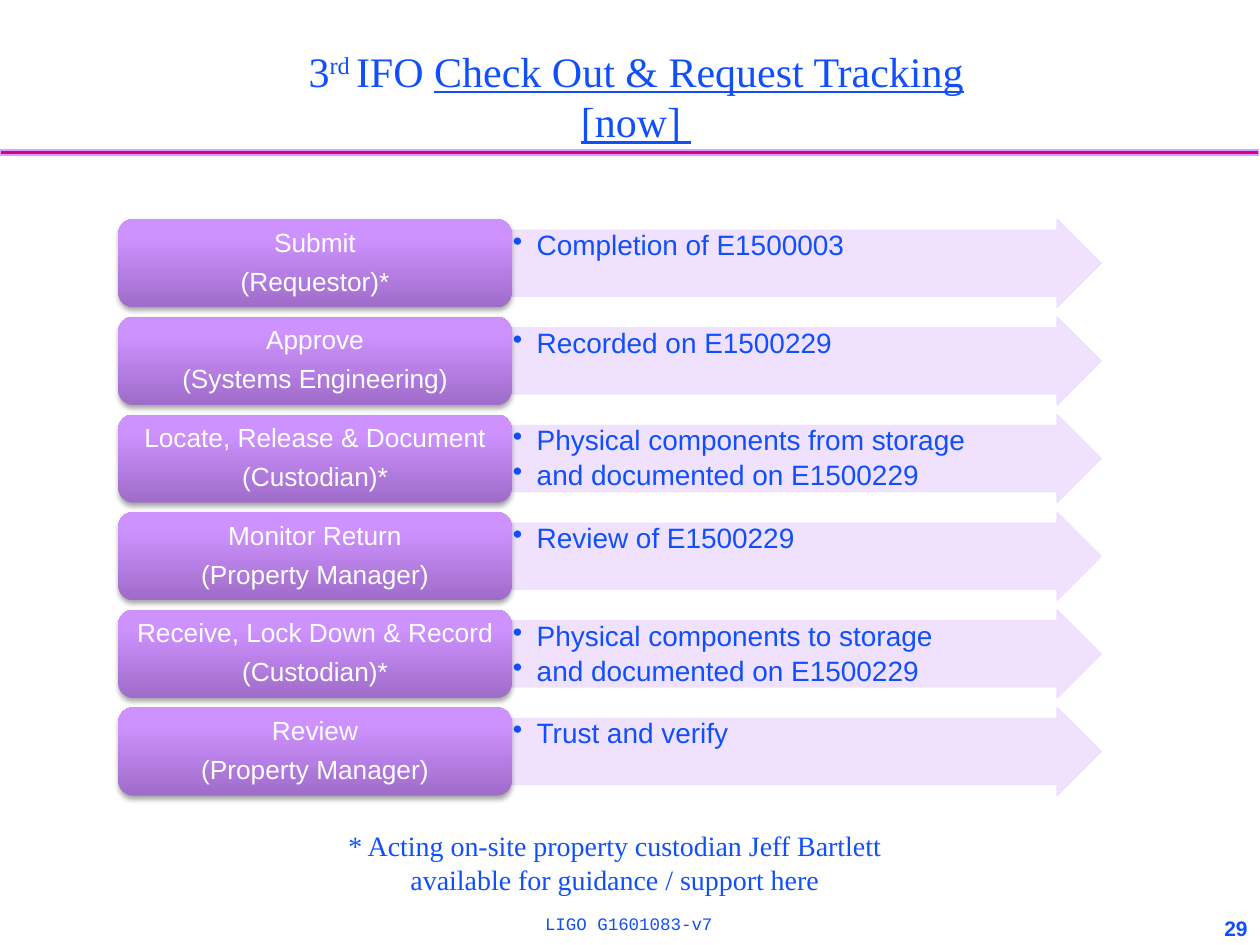
from pptx import Presentation
from pptx.dml.color import RGBColor
from pptx.enum.shapes import MSO_SHAPE
from pptx.enum.text import MSO_ANCHOR, PP_ALIGN
from pptx.oxml import parse_xml
from pptx.oxml.ns import nsdecls
from pptx.util import Inches, Pt
from copy import deepcopy
from lxml import etree

BLUE = RGBColor(0x11, 0x4F, 0xFB)
WHITE = RGBColor(0xFF, 0xFF, 0xFF)
MAGENTA = RGBColor(0xDC, 0x00, 0x81)
VIOLET = RGBColor(0xD4, 0x9F, 0xFF)
PALE = RGBColor(0xEF, 0xDF, 0xFF)
LABEL_STOPS = [(0, RGBColor(0x9F, 0x6C, 0xC9)),
               (0.8, RGBColor(0xCE, 0x92, 0xFF)),
               (1, RGBColor(0xCF, 0x94, 0xFF))]
RECT, ROUNDED = MSO_SHAPE.RECTANGLE, MSO_SHAPE.ROUNDED_RECTANGLE
ARROW = MSO_SHAPE.RIGHT_ARROW
TOP, MIDDLE = MSO_ANCHOR.TOP, MSO_ANCHOR.MIDDLE
LEFT, CENTER, RIGHT = PP_ALIGN.LEFT, PP_ALIGN.CENTER, PP_ALIGN.RIGHT

ALPHA = f'<a:alpha {nsdecls("a")} val="90000"/>'
BULLET = f'<a:buChar {nsdecls("a")} char="•"/>'
SHADOW = (f'<a:effectLst {nsdecls("a")}>'
          '<a:outerShdw blurRad="39400" dist="22900" dir="5400000" rotWithShape="0">'
          '<a:srgbClr val="000000"><a:alpha val="35000"/></a:srgbClr>'
          '</a:outerShdw></a:effectLst>')

STEPS = [
    (["Submit", "(Requestor)*"], ["Completion of E1500003"]),
    (["Approve", "(Systems Engineering)"], ["Recorded on E1500229"]),
    (["Locate, Release & Document", "(Custodian)*"],
     ["Physical components from storage", "and documented on E1500229"]),
    (["Monitor Return", "(Property Manager)"], ["Review of E1500229"]),
    (["Receive, Lock Down & Record", "(Custodian)*"],
     ["Physical components to storage", "and documented on E1500229"]),
    (["Review", "(Property Manager)"], ["Trust and verify"]),
]
FIRST_TOP, ROW_PITCH, ROW_HEIGHT = 1.74, 0.775, 0.7


def write_lines(tf, lines, size, font, color, align, anchor, inset=None):
    """Fill a frame with one paragraph per line; inset is (horizontal, vertical)."""
    tf.word_wrap = True
    tf.vertical_anchor = anchor
    if inset:
        tf.margin_left = tf.margin_right = Inches(inset[0])
        tf.margin_top = tf.margin_bottom = Inches(inset[1])
    tf.text = "\n".join(lines)
    for p in tf.paragraphs:
        p.alignment = align
        for r in p.runs:
            r.font.size = Pt(size)
            r.font.name = font
            r.font.color.rgb = color


def add_text(at, lines, size, font, align=CENTER, anchor=TOP):
    tf = s.shapes.add_textbox(*map(Inches, at)).text_frame
    write_lines(tf, lines, size, font, BLUE, align, anchor)
    return tf


prs = Presentation()
prs.slide_width, prs.slide_height = Inches(10), Inches(7.5)
s = prs.slides.add_slide(prs.slide_layouts[6])

# Rule under the title
bar = s.shapes.add_shape(RECT, Inches(0), Inches(1.19), Inches(9.99), Inches(0.04))
bar.shadow.inherit = False
bar.fill.solid()
bar.fill.fore_color.rgb = MAGENTA
bar.line.color.rgb = VIOLET
bar.line.width = Pt(0.75)

# Process rows: an arrow with details, and a label at its tail
for i, (label_lines, details) in enumerate(STEPS):
    top = Inches(FIRST_TOP + i * ROW_PITCH)

    arrow = s.shapes.add_shape(ARROW, Inches(4.06), top, Inches(4.68), Inches(ROW_HEIGHT))
    arrow.adjustments[0] = 0.75
    arrow.shadow.inherit = False
    arrow.fill.solid()
    arrow.fill.fore_color.rgb = PALE
    arrow.line.color.rgb = PALE
    arrow.line.width = Pt(0.75)
    for color in arrow.fill._xPr.iter("{*}srgbClr"):
        color.append(parse_xml(ALPHA))
    write_lines(arrow.text_frame, details, 16, "Arial", BLUE, LEFT, TOP, (0.01, 0.01))
    for p in arrow.text_frame.paragraphs:
        p.level = 1
        p.line_spacing = 0.9
        p.space_after = Pt(2.75)
        pPr = p._p.get_or_add_pPr()
        pPr.set("marL", str(Inches(0.19)))
        pPr.set("indent", str(Inches(-0.19)))
        pPr.append(parse_xml(BULLET))

    label = s.shapes.add_shape(ROUNDED, Inches(0.94), top, Inches(3.12), Inches(ROW_HEIGHT))
    label.line.fill.background()
    label.fill.gradient()
    label.fill.gradient_angle = 90
    stop_list = label.fill._xPr.find(".//{*}gsLst")
    stop_list.append(deepcopy(stop_list[-1]))
    for stop, (position, color) in zip(label.fill.gradient_stops, LABEL_STOPS):
        stop.position = position
        stop.color.rgb = color
    label._element.spPr.append(parse_xml(SHADOW))
    write_lines(label.text_frame, label_lines, 15, "Arial", WHITE, CENTER, MIDDLE, (0.04, 0.03))
    for p in label.text_frame.paragraphs:
        p.line_spacing = 0.9
        p.space_after = Pt(6)

# Title, with a superscript ordinal and an underlined remainder
title = add_text((1.22, 0.31, 7.66, 0.91), ["3", "[now] "], 24, "Times New Roman")
first, second = title.paragraphs
for text, raised, underlined in [("rd ", True, False), ("IFO ", False, False),
                                 ("Check Out & Request Tracking", False, True)]:
    r = first.add_run()
    r.text = text
    r.font.size = Pt(24)
    r.font.name = "Times New Roman"
    r.font.color.rgb = BLUE
    if underlined:
        r.font.underline = True
    if raised:
        r.font._element.set("baseline", "30000")
second.runs[0].font.underline = True

# Footnote, document number and page number
add_text((2.16, 6.53, 5.44, 0.64),
         ["* Acting on-site property custodian Jeff Bartlett\vavailable for guidance / support here"],
         16, "Times New Roman")
add_text((2.6, 7.2, 4.78, 0.3), ["LIGO G1601083-v7"], 10, "Courier New")
page = add_text((8.85, 7.23, 1.15, 0.27), ["29"], 12, "Arial", RIGHT, MIDDLE)
page.paragraphs[0].runs[0].font.bold = True

prs.save("out.pptx")
